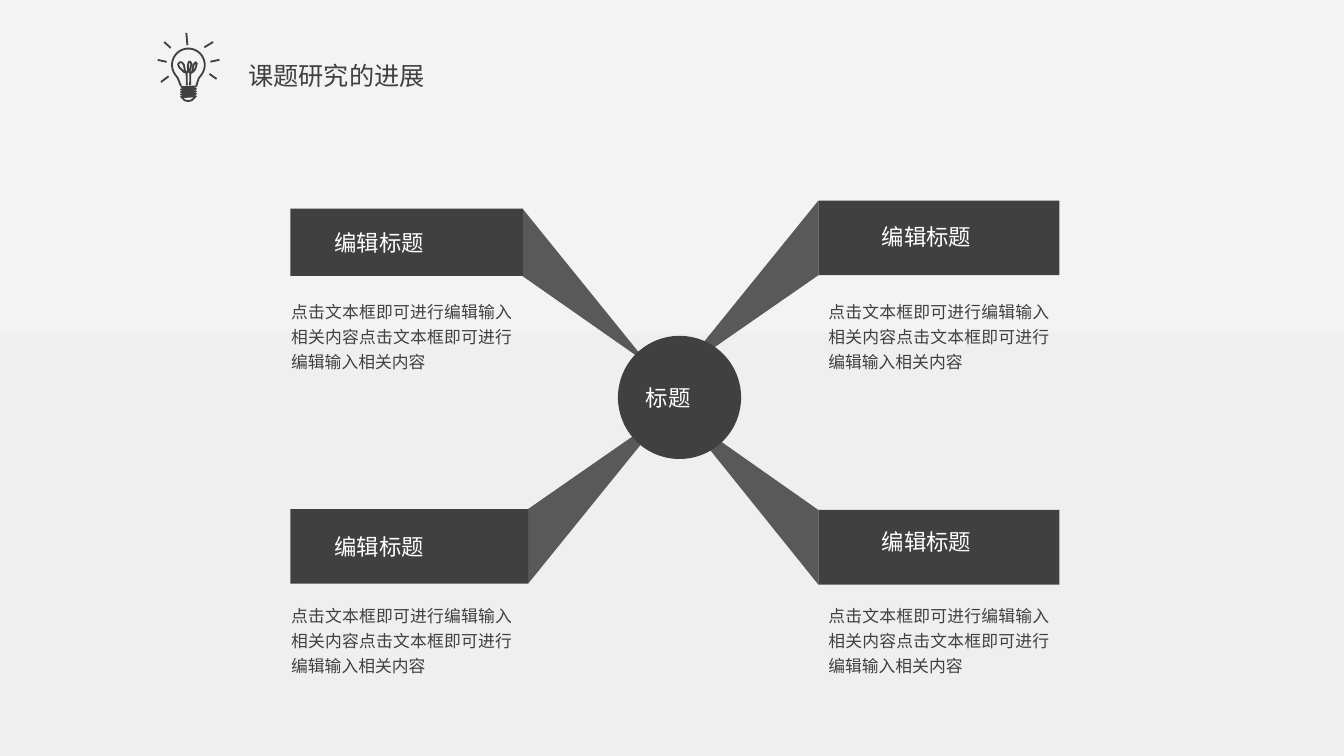
import math
from dataclasses import dataclass

from lxml import etree
from pptx import Presentation
from pptx.dml.color import RGBColor
from pptx.enum.shapes import MSO_CONNECTOR, MSO_SHAPE
from pptx.enum.text import MSO_AUTO_SIZE, PP_ALIGN
from pptx.oxml.ns import qn
from pptx.util import Pt

RECTANGLE, OVAL = MSO_SHAPE.RECTANGLE, MSO_SHAPE.OVAL
STRAIGHT = MSO_CONNECTOR.STRAIGHT
CENTER, JUSTIFY = PP_ALIGN.CENTER, PP_ALIGN.JUSTIFY
GROW = MSO_AUTO_SIZE.SHAPE_TO_FIT_TEXT


@dataclass(frozen=True)
class Theme:
    dark: RGBColor = RGBColor(0x40, 0x40, 0x40)
    arm: RGBColor = RGBColor(0x59, 0x59, 0x59)
    white: RGBColor = RGBColor(0xFF, 0xFF, 0xFF)
    floor: RGBColor = RGBColor(0xEF, 0xEF, 0xEF)
    sky: RGBColor = RGBColor(0xF3, 0xF3, 0xF3)
    font: str = "Noto Sans CJK JP"
    heading: int = 18
    label: int = 16
    body: int = 12
    stroke: float = 1.3


theme = Theme()
deck = Presentation()
deck.slide_width, deck.slide_height = Pt(960), Pt(540)
page = deck.slides.add_slide(deck.slide_layouts[6])


def add_outline(points, fill=None):
    """Closed filled shape when a fill is given, otherwise an open stroke."""
    corners = [(Pt(x), Pt(y)) for x, y in points]
    builder = page.shapes.build_freeform(*corners[0], scale=1.0)
    builder.add_line_segments(corners[1:], close=fill is not None)
    shape = builder.convert_to_shape()
    shape.shadow.inherit = False
    if fill is None:
        shape.fill.background()
        shape.line.color.rgb = theme.dark
        shape.line.width = Pt(theme.stroke)
    else:
        shape.fill.solid()
        shape.fill.fore_color.rgb = fill
        shape.line.fill.background()


def add_text(text, left, top, width, height, size, color, align=JUSTIFY, spacing=1.0):
    box = page.shapes.add_textbox(Pt(left), Pt(top), Pt(width), Pt(height))
    frame = box.text_frame
    frame.word_wrap = True
    frame.auto_size = GROW
    para = frame.paragraphs[0]
    para.alignment = align
    para.line_spacing = spacing
    span = para.add_run()
    span.text = text
    span.font.size = Pt(size)
    span.font.name = theme.font
    span.font.color.rgb = color
    east_asian = etree.SubElement(span.font._element, qn("a:ea"))
    east_asian.set("typeface", theme.font)


# Background gradient, rising from floor to sky
backdrop = page.background.fill
backdrop.gradient()
backdrop.gradient_angle = 90
for stop, position, color in zip(
    backdrop.gradient_stops, (0.12, 1.0), (theme.floor, theme.sky)
):
    stop.position = position
    stop.color.rgb = color

# Light bulb: glass, filament, screw base
glass = [(129.3, 61.5), (127, 55.8)]
for degrees in range(145, 396, 10):
    angle = math.radians(degrees)
    glass.append((134.6 + 11.7 * math.cos(angle), 46.4 + 11.7 * math.sin(angle)))
glass += [(142, 56), (140.2, 61.5)]
filament = [
    (133.5, 61), (133.3, 52), (131.5, 51.5), (128, 48), (127.2, 46), (128.2, 44.6),
    (129.8, 44.5), (131.3, 46.2), (132.4, 51.8), (134.3, 51.2), (134.2, 47),
    (134.8, 44.4), (135.8, 44), (136.8, 45.6), (135.3, 51.6), (137.2, 51.8),
    (138.2, 46.4), (139.7, 44.5), (140.6, 45.5), (139.5, 49.3), (138, 51.3),
    (136, 52.2), (135.8, 61),
]
base = []
for turn in range(5):
    thread = 61.8 + 1.75 * turn
    base += [(129.2, thread + 0.4), (140, thread)]
base += [(129.6, 69.4), (132, 71.7), (134.5, 72.2), (137, 71.6), (139.5, 69.2)]
for stroke in (glass, filament, base):
    add_outline(stroke)

# Light rays
rays = [
    (133.1, 23.5, 133.9, 32.3), (152.2, 30, 146, 33.8), (156.8, 42.7, 150.3, 44.1),
    (154.7, 56.4, 149.6, 52.8), (117.3, 30, 121.9, 34.2), (112.7, 42.8, 119, 44.2),
    (115, 58.6, 120.5, 54.5),
]
for ray in rays:
    line = page.shapes.add_connector(STRAIGHT, *(Pt(value) for value in ray))
    line.line.color.rgb = theme.dark
    line.line.width = Pt(theme.stroke)
    etree.SubElement(line._element.spPr, qn("a:effectLst"))

add_text("课题研究的进展", 45.4, 39.6, 390, 29, theme.heading, theme.dark, CENTER)

# Banners: left, top, width, height, inner edge, arm tip
banners = [
    (207.4, 363.6, 169.9, 53.3, 377.3, (476, 295)),
    (584.6, 364.3, 172.1, 53.3, 584.6, (486, 295)),
    (207.4, 149, 166.1, 48.2, 373.2, (463, 260)),
    (584.6, 143.3, 172.1, 53.3, 584.6, (486, 265)),
]
blocks = []
for left, top, width, height, edge, tip in banners:
    add_outline([(edge, top), tip, (edge, top + height)], theme.arm)
    blocks.append((RECTANGLE, left, top, width, height))
blocks.append((OVAL, 441.4, 239.9, 88, 88))
for kind, *place in blocks:
    shape = page.shapes.add_shape(kind, *(Pt(value) for value in place))
    shape.shadow.inherit = False
    shape.fill.solid()
    shape.fill.fore_color.rgb = theme.dark
    shape.line.fill.background()

# Labels and body texts in two columns and two rows
row_step = 217.5
columns = [(231.8, 159.8, 200.9), (622.8, 156.2, 584.6)]
for label_left, label_top, body_left in columns:
    for row in range(2):
        drop = row * row_step
        add_text("编辑标题", label_left, label_top + drop, 95, 26.6,
                 theme.label, theme.white)
        add_text("点击文本框即可进行编辑输入相关内容点击文本框即可进行编辑输入相关内容",
                 body_left, 208.1 + drop, 172.1, 61.9,
                 theme.body, theme.dark, spacing=1.25)
add_text("标题", 454.3, 270.7, 61.9, 26.6, theme.label, theme.white)

deck.save("out.pptx")
